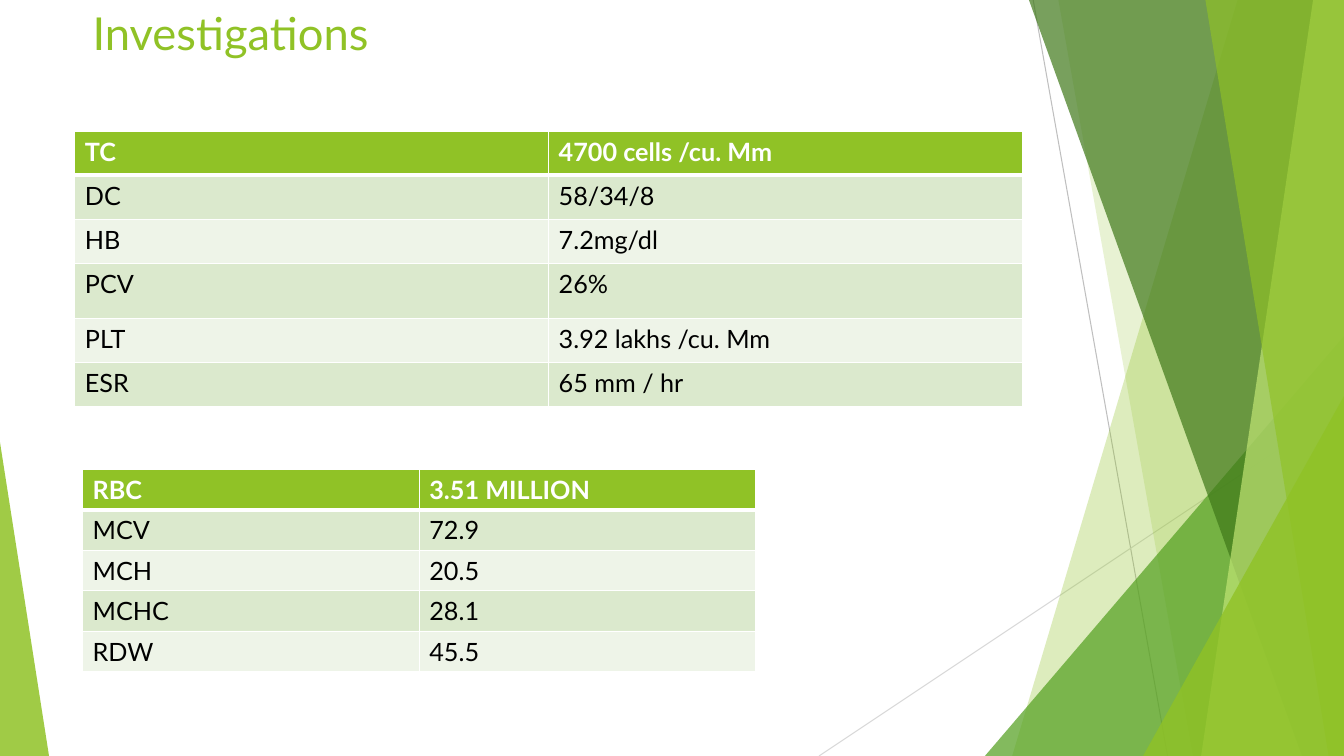
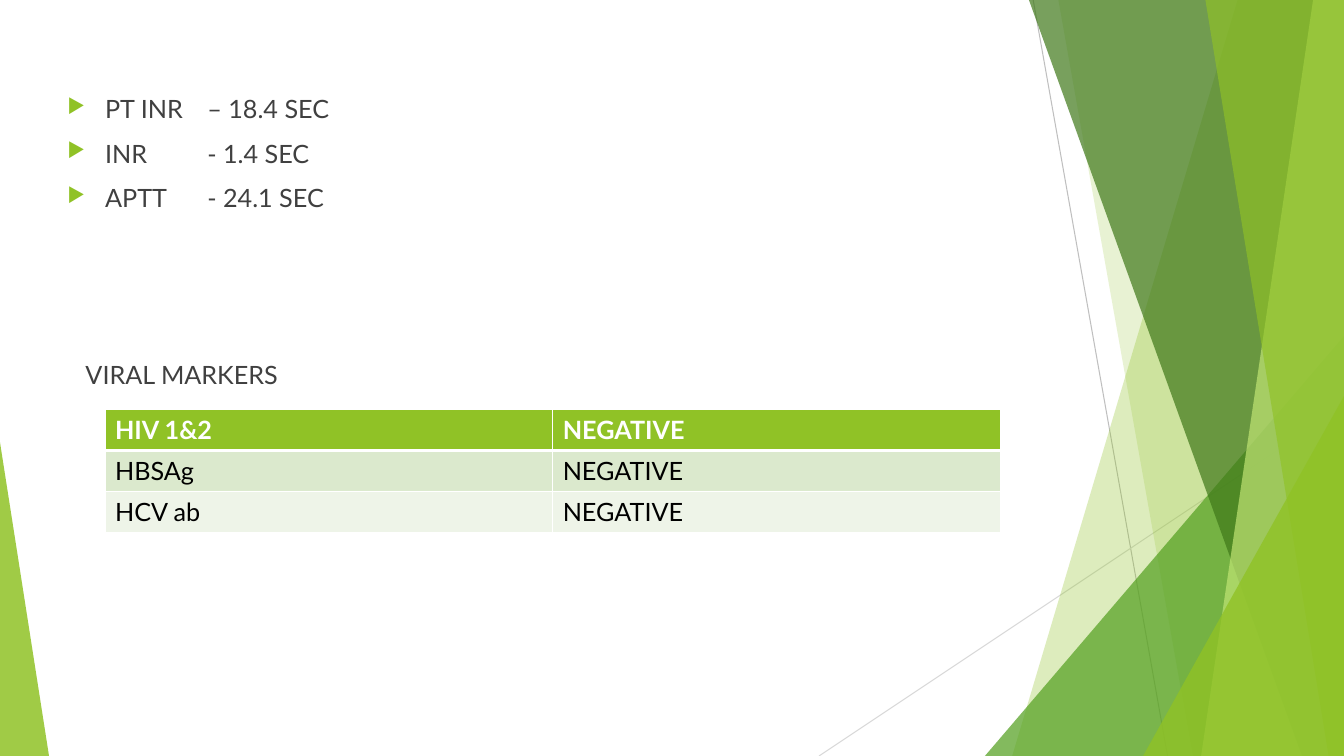
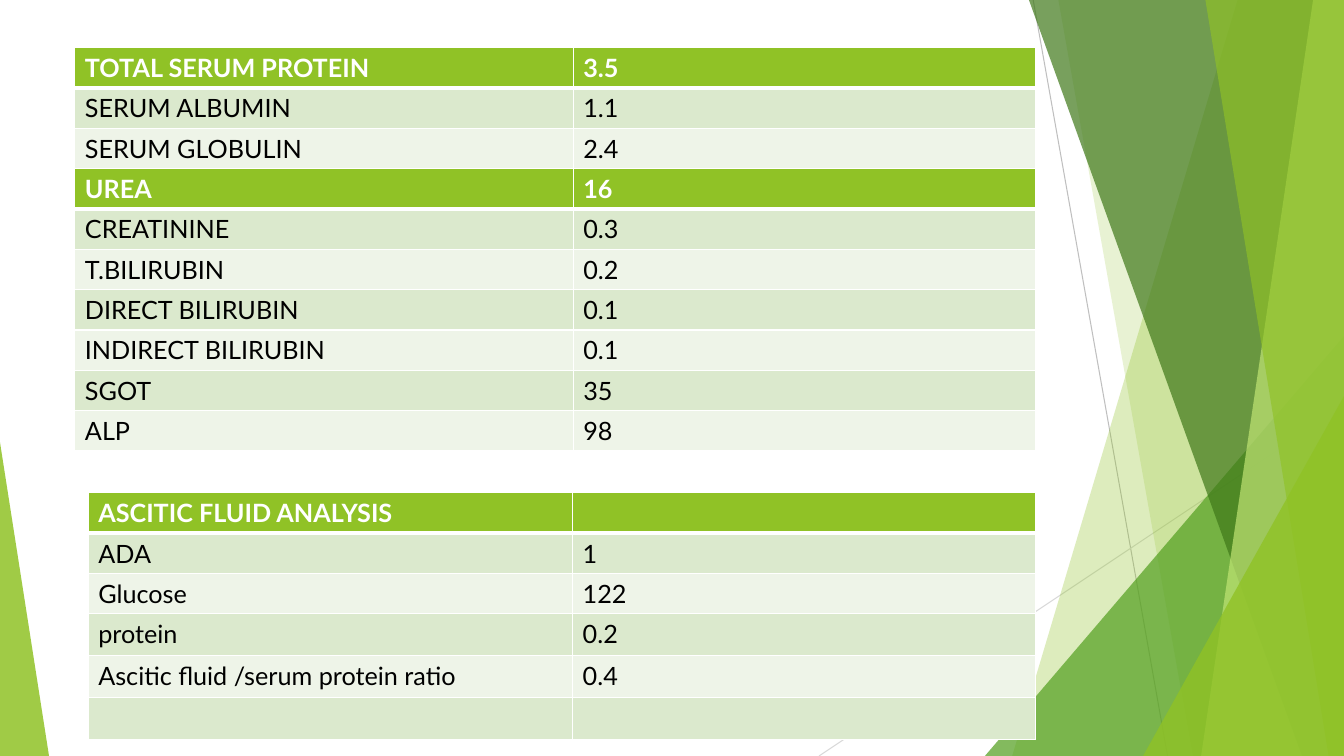
from lxml.etree import SubElement as Sub
from pptx import Presentation
from pptx.dml.color import RGBColor
from pptx.enum.shapes import MSO_CONNECTOR as Link, MSO_SHAPE as Geo
from pptx.oxml.ns import qn
from pptx.util import Pt

WIDE, HIGH = 960, 540
FACE = "Lato"
LIME, WHITE, BLACK, GREY = "90C226", "FFFFFF", "000000", "404040"
BANDS = ["EEF4E8", "DBE9CD"]

LINES = [(738, 0, 834, 540, "BFBFBF"), (960, 290, 585, 540, "D9D9D9")]
PANES = [
    {"wedge": {"top": 884, "base": 723}, "code": LIME, "alpha": 30},
    {"wedge": {"top": 756, "base": 852}, "code": LIME, "alpha": 20},
    {"peak": {"left": 703.5, "right": WIDE, "top": 240, "apex": 1},
     "code": "54A021", "alpha": 72},
    {"wedge": {"top": 735, "base": 930}, "code": "3F7819", "alpha": 70},
    {"wedge": {"top": 938, "base": 858}, "code": "C0E474", "alpha": 70},
    {"wedge": {"top": 861, "base": 949}, "code": LIME, "alpha": 65},
    {"peak": {"left": 816.5, "right": WIDE, "top": 283, "apex": 1},
     "code": LIME, "alpha": 80},
    {"peak": {"left": 0, "right": 35, "top": 316, "apex": 0},
     "code": LIME, "alpha": 85},
]

SLIDES = [
    {
        "title": "Investigations",
        "tables": [
            {"at": (59, 335.5), "cols": [240.5, 240.5], "rows": [28.8] * 5,
             "cells": [("RBC", "3.51 MILLION"), ("MCV", "72.9"),
                       ("MCH", "20.5"), ("MCHC", "28.1"), ("RDW", "45.5")]},
            {"at": (53.5, 93.75), "cols": [338.4, 338.4],
             "rows": [31.5, 31.5, 31.5, 39.4, 31.5, 31.5],
             "cells": [("TC", "4700 cells /cu. Mm"), ("DC", "58/34/8"),
                       ("HB", "7.2mg/dl"), ("PCV", "26%"),
                       ("PLT", "3.92 lakhs /cu. Mm"), ("ESR", "65 mm / hr")]},
        ],
    },
    {
        "tests": [("PT INR", "– 18.4 SEC"), ("INR", "- 1.4 SEC"),
                  ("APTT", "- 24.1 SEC")],
        "head": "VIRAL MARKERS",
        "tables": [
            {"at": (75, 292.5), "cols": [319.8, 319.8], "rows": [29.2] * 3,
             "cells": [("HIV 1&2", "NEGATIVE"), ("HBSAg", "NEGATIVE"),
                       ("HCV ab", "NEGATIVE")]},
        ],
    },
    {
        "tables": [
            {"at": (53.5, 34), "cols": [356, 330], "rows": [28.8] * 3,
             "cells": [("TOTAL SERUM PROTEIN", "3.5"),
                       ("SERUM ALBUMIN", "1.1"), ("SERUM GLOBULIN", "2.4")]},
            {"at": (53.5, 120.4), "cols": [356, 330], "rows": [28.8] * 7,
             "cells": [("UREA", "16"), ("CREATININE", "0.3"),
                       ("T.BILIRUBIN", "0.2"), ("DIRECT BILIRUBIN", "0.1"),
                       ("INDIRECT BILIRUBIN", "0.1"), ("SGOT", "35"),
                       ("ALP", "98")]},
            {"at": (63, 352), "cols": [346, 330.5],
             "rows": [28.8, 28.8, 28.8, 30, 30, 30],
             "cells": [("ASCITIC FLUID ANALYSIS", ""), ("ADA", "1"),
                       ("Glucose", "122"), ("protein", "0.2"),
                       ("Ascitic fluid /serum protein ratio", "0.4"),
                       ("", "")]},
        ],
    },
]


def rgb(code):
    return RGBColor.from_string(code)


def paint(fill, code):
    fill.solid()
    fill.fore_color.rgb = rgb(code)


def style(para, code, size=18, bold=False):
    for name, val in {"name": FACE, "size": Pt(size), "bold": bold}.items():
        setattr(para.font, name, val)
    para.font.color.rgb = rgb(code)


def add_wedge(slide, top, base):
    pen = slide.shapes.build_freeform(Pt(top), 0)
    ends = [(WIDE, 0), (WIDE, HIGH), (base, HIGH)]
    pen.add_line_segments([(Pt(x), Pt(y)) for x, y in ends])
    return pen.convert_to_shape()


def add_peak(slide, left, right, top, apex):
    box = (left, top, right - left, HIGH - top)
    peak = slide.shapes.add_shape(Geo.ISOSCELES_TRIANGLE, *map(Pt, box))
    peak.adjustments[0] = apex
    return peak


def add_pane(slide, code, alpha, wedge=None, peak=None):
    pane = add_wedge(slide, **wedge) if wedge else add_peak(slide, **peak)
    pane.shadow.inherit = False
    pane.line.fill.background()
    paint(pane.fill, code)
    tint = pane._element.spPr.find(".//" + qn("a:srgbClr"))
    Sub(tint, qn("a:alpha"), val=str(alpha * 1000))


def add_line(slide, *ends, code):
    line = slide.shapes.add_connector(Link.STRAIGHT, *map(Pt, ends))
    line.line.width = Pt(0.75)
    line.line.color.rgb = rgb(code)
    Sub(line._element.spPr, qn("a:effectLst"))


def dress(slide, layout):
    for *ends, code in LINES:
        add_line(slide, *ends, code=code)
    for pane in PANES:
        add_pane(slide, **pane)
    for shape in list(slide.shapes):
        layout.shapes._spTree.append(shape._element)


def add_text(slide, *box):
    frame = slide.shapes.add_textbox(*map(Pt, box)).text_frame
    frame.word_wrap = True
    return frame


def add_title(slide, text):
    para = add_text(slide, 59, 0, 677, 54).paragraphs[0]
    para.text = text
    style(para, LIME, 32.4)


def add_tests(slide, tests, head):
    frame = add_text(slide, 41, 63.4, 689, 412)
    for i, pair in enumerate(tests):
        para = frame.add_paragraph() if i else frame.paragraphs[0]
        para.text = "\t".join(pair)
        prop = para._p.get_or_add_pPr()
        prop.set("marL", str(Pt(27)))
        prop.set("indent", str(-Pt(27)))
        Sub(Sub(prop, qn("a:buClr")), qn("a:srgbClr"), val=LIME)
        Sub(prop, qn("a:buSzPct"), val="80000")
        Sub(prop, qn("a:buChar"), char="▶")
        Sub(Sub(prop, qn("a:tabLst")), qn("a:tab"), pos=str(Pt(100)), algn="l")
        if i:
            para.space_before = Pt(10)
        style(para, GREY)
    para = frame.add_paragraph()
    para.text = head
    para._p.get_or_add_pPr().set("marL", str(Pt(13)))
    para.space_before = Pt(105)
    style(para, GREY)


def edge(cell, row):
    prop = cell._tc.get_or_add_tcPr()
    wide = {"lnT": 3 if row == 1 else 1, "lnB": 1 if row else 3}
    for side in ("lnL", "lnR", "lnT", "lnB"):
        line = Sub(prop, qn("a:" + side), w=str(Pt(wide.get(side, 1))))
        Sub(Sub(line, qn("a:solidFill")), qn("a:srgbClr"), val=WHITE)


def add_grid(slide, at, cols, rows, cells):
    box = (*at, sum(cols), sum(rows))
    grid = slide.shapes.add_table(len(rows), len(cols), *map(Pt, box)).table
    grid.horz_banding = False
    for col, wide in zip(grid.columns, cols):
        col.width = Pt(wide)
    for r, (tall, texts) in enumerate(zip(rows, cells)):
        grid.rows[r].height = Pt(tall)
        for c, text in enumerate(texts):
            cell = grid.cell(r, c)
            cell.text = text
            edge(cell, r)
            paint(cell.fill, BANDS[r % 2] if r else LIME)
            style(cell.text_frame.paragraphs[0], BLACK if r else WHITE,
                  bold=r == 0)


def main():
    deck = Presentation()
    deck.slide_width, deck.slide_height = Pt(WIDE), Pt(HIGH)
    blank = deck.slide_layouts[6]
    for hold in list(blank.placeholders):
        blank.shapes._spTree.remove(hold._element)
    for i, data in enumerate(SLIDES):
        slide = deck.slides.add_slide(blank)
        if i == 0:
            dress(slide, blank)
        if "title" in data:
            add_title(slide, data["title"])
        if "tests" in data:
            add_tests(slide, data["tests"], data["head"])
        for grid in data["tables"]:
            add_grid(slide, **grid)
    deck.save("out.pptx")


if __name__ == "__main__":
    main()
